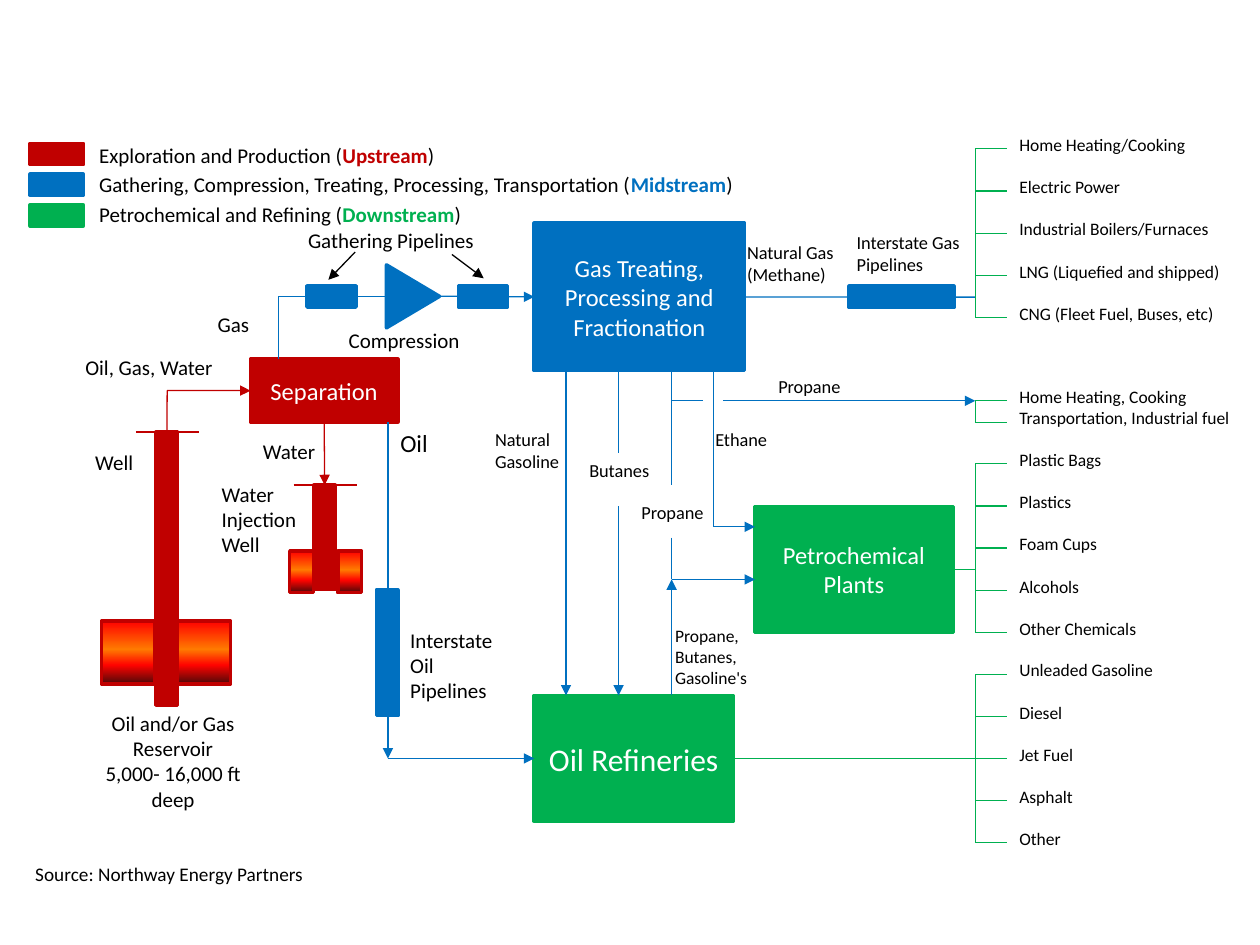
from dataclasses import dataclass
from lxml.etree import SubElement
from pptx import Presentation
from pptx.dml.color import RGBColor
from pptx.enum.shapes import MSO_CONNECTOR, MSO_SHAPE
from pptx.enum.text import MSO_ANCHOR, MSO_AUTO_SIZE, PP_ALIGN
from pptx.oxml.ns import qn
from pptx.slide import Slide
from pptx.util import Cm, Pt

COLORS = {"upstream": "C00000", "midstream": "0070C0", "downstream": "00B050",
          "ink": "000000", "paper": "FFFFFF"}
ROCK_STOPS = [(0, "FF0000"), (45, "FF7A00"), (70, "FF0300"), (100, "4D0808")]
FONT = "Calibri"
TOP, LEFT, BOTTOM, RIGHT = range(4)
PIPE = 0.43  # thickness of pipelines and well shafts


def rgb(name):
    return RGBColor.from_string(COLORS[name])


def style_run(run, size, color, bold=False):
    run.font.name = FONT
    run.font.size = Pt(size)
    run.font.bold = bold
    run.font.color.rgb = rgb(color)


def style_text(frame, size, color, align):
    for paragraph in frame.paragraphs:
        paragraph.alignment = align
        for run in paragraph.runs:
            style_run(run, size, color)


@dataclass
class Region:
    """Part of the slide; all offsets are centimetres from its corner."""
    slide: Slide
    left: float
    top: float

    def at(self, x, y):
        return Cm(self.left + x), Cm(self.top + y)

    def block(self, x, y, width, height, color, text="", size=14, kind=MSO_SHAPE.RECTANGLE):
        block = self.slide.shapes.add_shape(kind, *self.at(x, y), Cm(width), Cm(height))
        block.shadow.inherit = False
        block.fill.solid()
        block.fill.fore_color.rgb = rgb(color)
        block.line.color.rgb = rgb(color)
        block.line.width = Pt(2)
        if text:
            block.text_frame.text = text
            block.text_frame.word_wrap = True
            block.text_frame.vertical_anchor = MSO_ANCHOR.MIDDLE
            style_text(block.text_frame, size, "paper", PP_ALIGN.CENTER)
        return block

    def label(self, x, y, width, text, size=12, wrap=False, align=PP_ALIGN.LEFT):
        height = 0.25 + 0.043 * size * (text.count("\n") + 1)
        label = self.slide.shapes.add_textbox(*self.at(x, y), Cm(width), Cm(height))
        frame = label.text_frame
        frame.text = text
        frame.word_wrap = wrap
        frame.auto_size = MSO_AUTO_SIZE.SHAPE_TO_FIT_TEXT
        style_text(frame, size, "ink", align)
        return frame

    def line(self, x1, y1, x2, y2, color, arrow=False, width=0.75, begin=None, end=None):
        line = self.slide.shapes.add_connector(
            MSO_CONNECTOR.STRAIGHT, *self.at(x1, y1), *self.at(x2, y2))
        line.line.color.rgb = rgb(color)
        line.line.width = Pt(width)
        if arrow:
            SubElement(line.line._get_or_add_ln(), qn("a:tailEnd"), type="triangle")
        SubElement(line._element.spPr, qn("a:effectLst"))
        if begin:
            line.begin_connect(*begin)
        if end:
            line.end_connect(*end)


def fill_rock(rock):
    rock.fill.gradient()
    rock.fill.gradient_angle = 270
    stops = rock._element.spPr.find(".//" + qn("a:gsLst"))
    for stop in list(stops):
        stops.remove(stop)
    for percent, color in ROCK_STOPS:
        stop = SubElement(stops, qn("a:gs"), pos=str(percent * 1000))
        SubElement(stop, qn("a:srgbClr"), val=color)


def draw_legend(area):
    rows = [("Exploration and Production (", "upstream", 8.31),
            ("Gathering, Compression, Treating, Processing, Transportation (", "midstream", 14.76),
            ("Petrochemical and Refining (", "downstream", 8.79)]
    for row, (activity, sector, width) in enumerate(rows):
        area.block(0, 0.15 + row * 0.62, 1.07, PIPE, sector)
        paragraph = area.label(1.14, row * 0.6, width, activity).paragraphs[0]
        for text, color, bold in [(sector.title(), sector, True), (")", "ink", False)]:
            run = paragraph.add_run()
            run.text = text
            style_run(run, 12, color, bold)


def draw_well(area, depth, rock_lefts, rock_top, rock_width, rock_height):
    shaft = area.block(0.41, 0, PIPE, depth, "upstream")
    area.line(0, 0, 1.27, 0, "upstream", width=1.5)
    for rock_left in rock_lefts:
        fill_rock(area.block(rock_left, rock_top, rock_width, rock_height, "upstream"))
    return shaft


def draw_production_well(area, separation):
    shaft = draw_well(area, 5.51, (-0.69, 0.84), 3.81, 1.07, 1.27)
    area.line(0.63, 0, 0.63, -0.84, "upstream", begin=(shaft, TOP))
    area.line(0.63, -0.84, 2.31, -0.84, "upstream", arrow=True, end=(separation, LEFT))
    area.label(-1.27, -1.68, 3.43, "Oil, Gas, Water")
    area.label(-1.07, 0.23, 1.35, "Well")
    area.label(-1.32, 5.49, 4.14, "Oil and/or Gas Reservoir\n5,000- 16,000 ft deep",
               wrap=True, align=PP_ALIGN.CENTER)


def draw_injection_well(area, separation):
    shaft = draw_well(area, 2.11, (-0.08, 0.89), 1.33, 0.48, 0.84)
    area.line(0.63, -1.27, 0.63, 0, "upstream", arrow=True,
              begin=(separation, BOTTOM), end=(shaft, TOP))
    area.label(-1.7, -0.2, 2.11, "Water\nInjection\nWell")


def draw_separation(area, gas_plant, refinery):
    separation = area.block(0, 0, 2.97, 1.27, "upstream", "Separation")
    area.label(0, 1.47, 1.63, "Water")
    # Gas gathering and compression
    area.line(0.56, 0, 0.56, -1.27, "midstream")
    area.line(0.56, -1.27, 2.77, -1.27, "midstream")
    area.line(3.81, -1.27, 5.72, -1.27, "midstream", arrow=True, end=(gas_plant, LEFT))
    compressor = area.block(2.64, -1.8, 1.27, 1.07, "midstream",
                            kind=MSO_SHAPE.ISOSCELES_TRIANGLE)
    compressor.rotation = 90
    for pipe_left in (1.14, 4.19):
        area.block(pipe_left, -1.48, 0.99, PIPE, "midstream")
    area.label(-0.91, -1.09, 1.3, "Gas")
    area.label(1.73, -0.76, 3.02, "Compression")
    area.label(0.91, -2.77, 4.22, "Gathering Pipelines")
    area.line(2.11, -2.16, 1.57, -1.6, "ink", arrow=True)
    area.line(4.06, -2.11, 4.7, -1.63, "ink", arrow=True)
    # Oil pipeline
    area.line(2.77, 1.27, 2.77, 8.05, "midstream", arrow=True)
    area.line(2.77, 8.05, 5.72, 8.05, "midstream", arrow=True, end=(refinery, LEFT))
    area.block(2.54, 4.65, PIPE, 2.54, "midstream")
    area.label(2.77, 1.27, 1.12, "Oil", 14)
    area.label(2.97, 5.28, 2.59, "Interstate Oil\nPipelines", wrap=True)
    return separation


def draw_gas_plant(area):
    plant = area.block(0, 0, 4.24, 2.97, "midstream",
                       "Gas Treating, Processing and Fractionation")
    area.line(4.24, 1.49, 8.89, 1.49, "midstream", begin=(plant, RIGHT))
    area.block(6.35, 1.27, 2.11, PIPE, "midstream")
    area.label(4.04, 0.23, 2.51, "Natural Gas\n(Methane)", 10.5)
    area.label(6.25, 0.03, 2.87, "Interstate Gas\nPipelines", 10.5)
    return plant


def draw_green_plant(area, text, size, reach):
    plant = area.block(0, 0, 4.01, 2.54, "downstream", text, size)
    area.line(4.01, 1.27, reach, 1.27, "downstream", begin=(plant, RIGHT))
    return plant


def draw_gas_liquids(area):
    gasoline, butanes, propane, ethane = 0.64, 1.7, 2.77, 3.61
    plant_left, refinery_top, junction = 4.45, 6.58, 4.24
    flows = [(gasoline, 0, gasoline, refinery_top, True),
             (butanes, 0, butanes, 1.7, False),
             (butanes, 2.77, butanes, refinery_top, True),
             (propane, 0, propane, 2.34, False),
             (propane, 3.4, propane, junction, False),
             (propane, refinery_top, propane, junction, True),
             (propane, junction, plant_left, junction, True),
             (propane, 0.64, 3.4, 0.64, False),
             (3.81, 0.64, 8.89, 0.64, True),
             (ethane, 0, ethane, 3.18, False),
             (ethane, 3.18, plant_left, 3.18, True)]
    for x1, y1, x2, y2, arrow in flows:
        area.line(x1, y1, x2, y2, "midstream", arrow)
    for x, y, width, text in [(-1.04, 1.07, 2.01, "Natural\nGasoline"),
                              (0.86, 1.7, 1.88, "Butanes"),
                              (1.91, 2.54, 1.93, "Propane"),
                              (3.4, 1.07, 1.7, "Ethane"),
                              (4.67, 0, 1.93, "Propane")]:
        area.label(x, y, width, text, 10.5)
    area.label(2.59, 5.03, 2.16, "Propane,\nButanes,\nGasoline's", 10)


def draw_products(area, products, step=0.85):
    area.line(0, 0, 0, step * (len(products) - 1), "downstream")
    for row, (product, width) in enumerate(products):
        area.line(0, row * step, 0.64, row * step, "downstream")
        area.label(0.64, row * step - 0.42, width, product, 10)


def main():
    deck = Presentation()
    deck.slide_width, deck.slide_height = Cm(25.4), Cm(19.05)
    slide = deck.slides.add_slide(deck.slide_layouts[6])

    # Plants and wells
    draw_legend(Region(slide, 0.61, 2.74))
    gas_plant = draw_gas_plant(Region(slide, 10.77, 4.5))
    draw_green_plant(Region(slide, 15.21, 10.21), "Petrochemical\nPlants", 14, 4.45)
    refinery = draw_green_plant(Region(slide, 10.77, 14.02), "Oil Refineries", 18, 8.89)
    separation = draw_separation(Region(slide, 5.05, 7.24), gas_plant, refinery)
    draw_production_well(Region(slide, 2.74, 8.71), separation)
    draw_injection_well(Region(slide, 5.92, 9.78), separation)
    draw_gas_liquids(Region(slide, 10.77, 7.44))

    # End products
    draw_products(Region(slide, 19.66, 3), [
        ("Home Heating/Cooking", 4.17), ("Electric Power", 2.79),
        ("Industrial Boilers/Furnaces", 4.72), ("LNG (Liquefied and shipped)", 5.03),
        ("CNG (Fleet Fuel, Buses, etc)", 5.08)])
    draw_products(Region(slide, 19.66, 8.08), [
        ("Home Heating, Cooking", 4.27), ("Transportation, Industrial fuel", 5.11)], 0.43)
    draw_products(Region(slide, 19.66, 9.35), [
        ("Plastic Bags", 2.64), ("Plastics", 1.73), ("Foam Cups", 2.13),
        ("Alcohols", 1.85), ("Other Chemicals", 3.15)])
    draw_products(Region(slide, 19.66, 13.59), [
        ("Unleaded Gasoline", 3.53), ("Diesel", 1.5), ("Jet Fuel", 1.78),
        ("Asphalt", 1.7), ("Other", 1.4)])

    # Source
    Region(slide, 0.46, 17.25).label(0, 0, 9.35, "Source: Northway Energy Partners", 11, wrap=True)
    deck.save("out.pptx")


if __name__ == "__main__":
    main()
